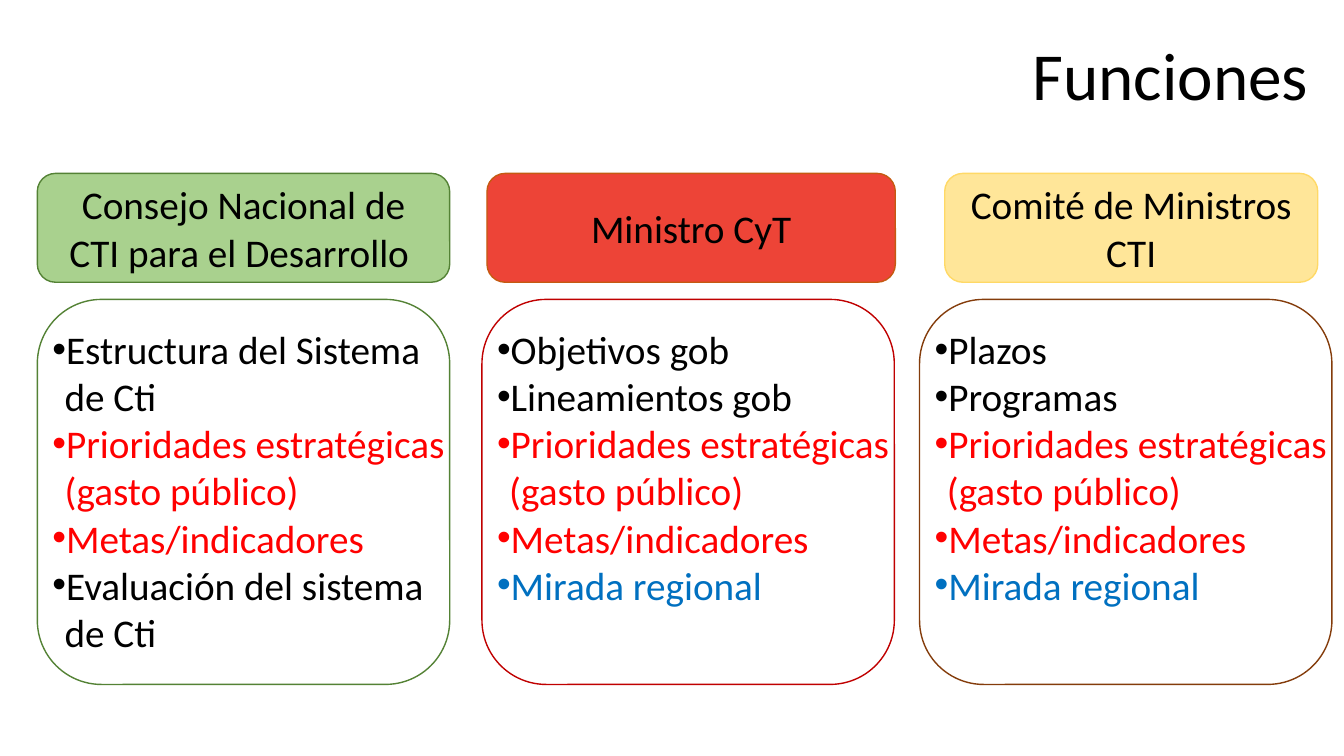
from lxml import etree
from pptx import Presentation
from pptx.dml.color import RGBColor
from pptx.enum.shapes import MSO_SHAPE
from pptx.enum.text import MSO_ANCHOR, MSO_AUTO_SIZE, PP_ALIGN
from pptx.oxml.ns import qn
from pptx.util import Emu, Pt

ROUNDED = MSO_SHAPE.ROUNDED_RECTANGLE
TOP, MIDDLE = MSO_ANCHOR.TOP, MSO_ANCHOR.MIDDLE
NO_AUTOSIZE = MSO_AUTO_SIZE.NONE
LEFT, CENTER = PP_ALIGN.LEFT, PP_ALIGN.CENTER

EMU_PER_PX = 9144
COMPARISON_LAYOUT = 4
BLACK, RED, BLUE = "000000", "FF0000", "0070C0"
HEADER_TOP, HEADER_HEIGHT = 172, 108
FRAME_TOP, FRAME_WIDTH, FRAME_HEIGHT = 297, 409, 382
LIST_TOP, LIST_INSET, BULLET_INDENT = 318, 5, 12

SHARED_DUTIES = [
    ("Prioridades estratégicas (gasto público)", RED),
    ("Metas/indicadores", RED),
]
REGIONAL_VIEW = ("Mirada regional", BLUE)

BODIES = [
    dict(
        placeholder=1,
        header="Consejo Nacional de CTI para el Desarrollo ",
        header_left=37, header_width=409, fill="A9D18E", line="548235",
        frame_left=37, frame_line="548235", list_height=340,
        duties=[("Estructura del Sistema de Cti", BLACK), *SHARED_DUTIES,
                ("Evaluación del sistema de Cti", BLACK)],
    ),
    dict(
        placeholder=2,
        header="Ministro CyT",
        header_left=483, header_width=405, fill="ED4437", line="C55A11",
        frame_left=478, frame_line="C00000", list_height=293,
        duties=[("Objetivos gob", BLACK), ("Lineamientos gob", BLACK),
                *SHARED_DUTIES, REGIONAL_VIEW],
    ),
    dict(
        placeholder=4,
        header="Comité de Ministros CTI",
        header_left=937, header_width=370, fill="FFE699", line="FFD966",
        frame_left=912, frame_line="843C0B", list_height=293,
        duties=[("Plazos", BLACK), ("Programas", BLACK),
                *SHARED_DUTIES, REGIONAL_VIEW],
    ),
]


def px(length):
    return Emu(length * EMU_PER_PX)


def rgb(value):
    return RGBColor.from_string(value)


def add_bullet(paragraph):
    properties = paragraph._p.get_or_add_pPr()
    properties.set("marL", str(px(BULLET_INDENT)))
    properties.set("indent", str(-px(BULLET_INDENT)))
    etree.SubElement(properties, qn("a:buFont")).set("typeface", "Arial")
    etree.SubElement(properties, qn("a:buChar")).set("char", "•")


def write(paragraph, text, size=28, color=BLACK, align=LEFT, bullet=False):
    paragraph.alignment = align
    paragraph.line_spacing = 1.0
    paragraph.space_before = Pt(0)
    if bullet:
        add_bullet(paragraph)
    run = paragraph.add_run()
    run.text = text
    run.font.name = "Calibri"
    run.font.size = Pt(size)
    run.font.bold = False
    run.font.color.rgb = rgb(color)


def place(placeholder, left, top, width, height, wrap=True):
    placeholder.left, placeholder.top = px(left), px(top)
    placeholder.width, placeholder.height = px(width), px(height)
    frame = placeholder.text_frame
    frame.auto_size = NO_AUTOSIZE
    frame.word_wrap = wrap
    frame.vertical_anchor = TOP
    return frame


def add_rounded_box(slide, left, top, width, height, line, fill=None):
    box = slide.shapes.add_shape(ROUNDED, px(left), px(top), px(width), px(height))
    box.shadow.inherit = False
    box.line.color.rgb = rgb(line)
    box.line.width = Pt(1)
    if fill:
        box.fill.solid()
        box.fill.fore_color.rgb = rgb(fill)
    else:
        box.fill.background()
    return box


def add_header(slide, body):
    header = add_rounded_box(slide, body["header_left"], HEADER_TOP,
                             body["header_width"], HEADER_HEIGHT,
                             body["line"], body["fill"])
    header.text_frame.word_wrap = True
    header.text_frame.vertical_anchor = MIDDLE
    write(header.text_frame.paragraphs[0], body["header"], align=CENTER)


def fill_duties(placeholder, body):
    frame = place(placeholder, body["frame_left"] + LIST_INSET, LIST_TOP,
                  FRAME_WIDTH, body["list_height"])
    for index, (duty, color) in enumerate(body["duties"]):
        paragraph = frame.add_paragraph() if index else frame.paragraphs[0]
        write(paragraph, duty, color=color, bullet=True)


def main():
    deck = Presentation()
    deck.slide_width, deck.slide_height = px(1333), px(750)
    slide = deck.slides.add_slide(deck.slide_layouts[COMPARISON_LAYOUT])
    placeholders = {item.placeholder_format.idx: item for item in slide.placeholders}

    title = place(slide.shapes.title, 1014, 28, 296, 91, wrap=False)
    write(title.paragraphs[0], "Funciones", size=48)

    for body in BODIES:
        add_header(slide, body)
        add_rounded_box(slide, body["frame_left"], FRAME_TOP, FRAME_WIDTH,
                        FRAME_HEIGHT, body["frame_line"])
        fill_duties(placeholders[body["placeholder"]], body)

    unused = placeholders[3].element
    unused.getparent().remove(unused)
    deck.save("out.pptx")


if __name__ == "__main__":
    main()
